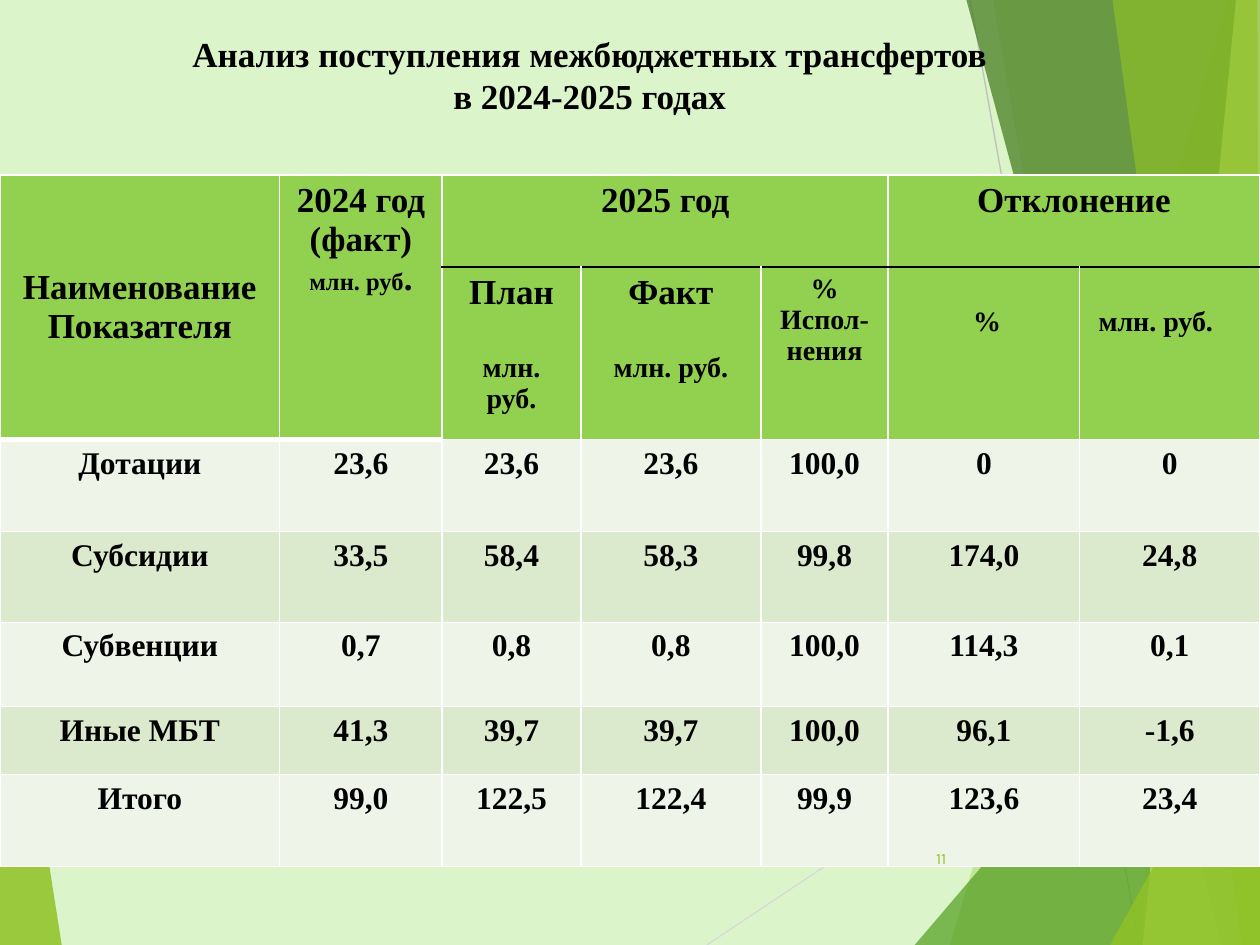
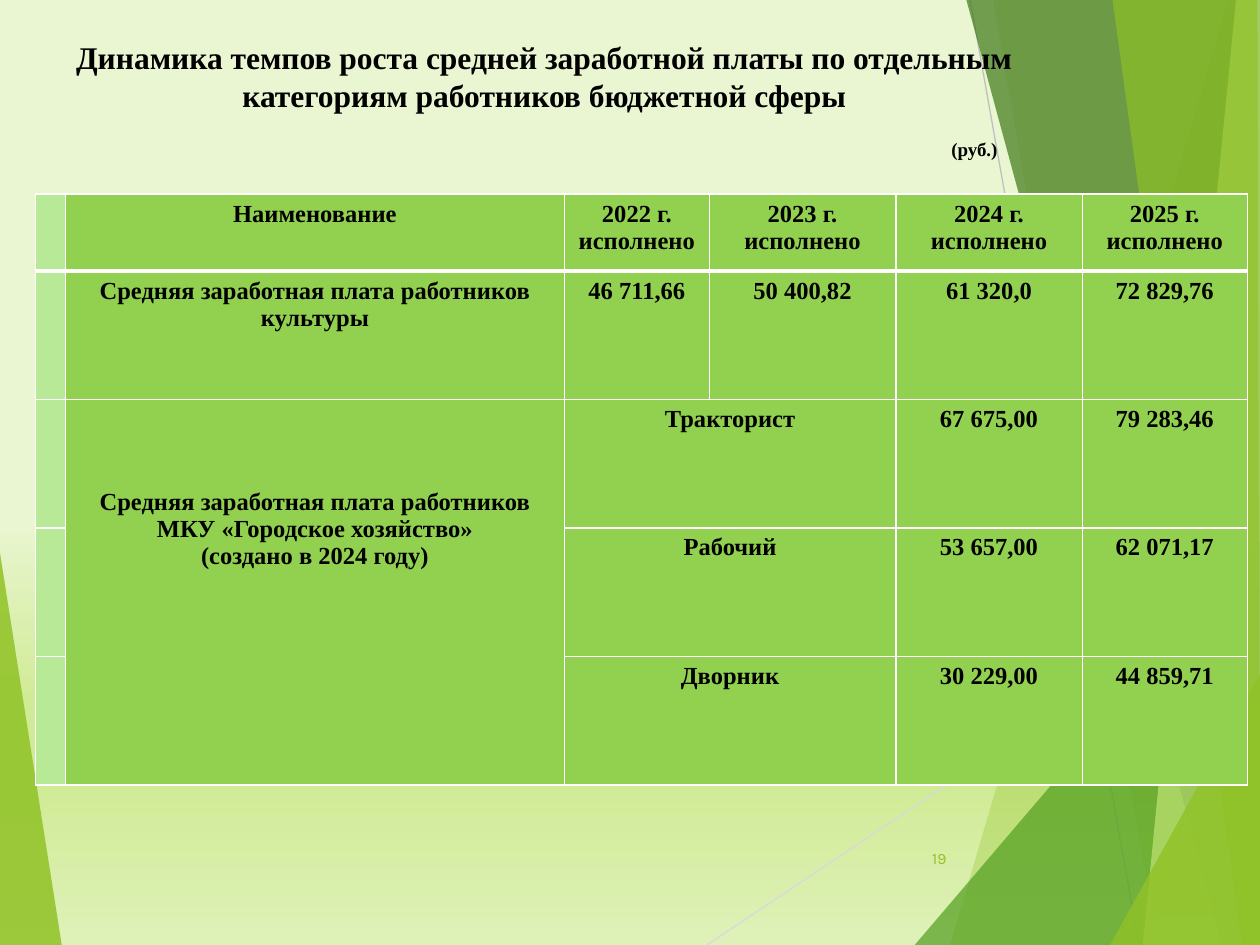
from dataclasses import dataclass

from lxml.etree import SubElement
from pptx import Presentation
from pptx.dml.color import RGBColor
from pptx.enum.shapes import MSO_CONNECTOR as CONN
from pptx.enum.text import MSO_ANCHOR as ANCHOR, MSO_AUTO_SIZE as AUTO, PP_ALIGN as AL
from pptx.oxml.ns import qn
from pptx.util import Inches, Pt


@dataclass(frozen=True)
class Theme:
    font: str = "Times New Roman"
    number_font: str = "Karla"
    black: str = "000000"
    white: str = "FFFFFF"
    accent: str = "90C226"
    leaf: str = "54A021"
    forest: str = "3F7819"
    lime: str = "C0E474"
    header: str = "92D050"
    margin_cell: str = "B7E996"
    bands: tuple = ("EEF4E8", "DBE9CD")
    page: str = "DBF4CA"
    page_stops: tuple = ((22, "EAF6D1"), (55, "EAF6D1"), (74, "D0EB96"),
                         (83, "D0EB96"), (100, "DFF1B9"))
    big: float = 20
    body: float = 18
    unit: float = 16
    small: float = 14
    note: float = 10.8
    number: float = 9


T = Theme()

# Facets of the shared backdrop: corner points, colour, opacity in percent
FACETS = [
    ([(0, 4.39), (0.49, 7.5), (0, 7.5)], T.accent, 85),
    ([(9.75, 0), (7.54, 7.5), (10, 7.5), (10, 0)], T.accent, 30),
    ([(7.88, 0), (9.19, 7.5), (10, 7.5), (10, 0)], T.accent, 20),
    ([(7.26, 7.5), (10, 4.29), (10, 7.5)], T.leaf, 72),
    ([(7.67, 0), (9.7, 7.5), (10, 7.5), (10, 0)], T.forest, 70),
    ([(9.81, 0), (9.07, 7.5), (10, 7.5), (10, 0)], T.lime, 70),
    ([(8.83, 0), (9.86, 7.5), (10, 7.5), (9.98, 0)], T.accent, 65),
    ([(8.81, 7.5), (10, 5.35), (10, 7.5)], T.accent, 80),
]
RAYS = [((5.61, 7.5), (10, 4.57), "D9D9D9"), ((7.7, 0), (9.04, 7.5), "BFBFBF")]


def rgb(color):
    return RGBColor.from_string(color)


def write(tf, text, size=T.body, color=T.black, bold=True, font=T.font,
          align=AL.CENTER, before=0, indent=0, same=False):
    """Add paragraphs (one per line of text), or a run to the last paragraph."""
    for line in text.split("\n"):
        p = tf.paragraphs[-1]
        if p.runs and not same:
            p = tf.add_paragraph()
        p.alignment = align
        if before:
            p.space_before = Pt(before)
        if indent:
            p._p.get_or_add_pPr().set("marL", str(Inches(indent)))
        for i, part in enumerate(line.split("\v")):
            if i:
                p.add_line_break()
            r = p.add_run()
            r.text = part
            f = r.font
            f.name, f.size, f.bold = font, Pt(size), bold
            f.color.rgb = rgb(color)


# Backdrop, drawn once and kept on the layout

def add_facet(s, points, color, opacity):
    start, *rest = [(Inches(x), Inches(y)) for x, y in points]
    builder = s.shapes.build_freeform(*start)
    builder.add_line_segments(rest, close=True)
    sp = builder.convert_to_shape()
    sp.shadow.inherit = False
    sp.fill.solid()
    sp.fill.fore_color.rgb = rgb(color)
    sp.line.fill.background()
    clr = sp.element.spPr.find(qn("a:solidFill"))[0]
    SubElement(clr, qn("a:alpha"), val=str(opacity * 1000))
    return sp


def add_ray(s, start, end, color):
    ends = [Inches(v) for v in (*start, *end)]
    line = s.shapes.add_connector(CONN.STRAIGHT, *ends)
    line.line.color.rgb = rgb(color)
    line.line.width = Pt(0.75)
    SubElement(line.element.spPr, qn("a:effectLst"))
    return line


def move_backdrop_to_layout(s):
    parts = [add_facet(s, *FACETS[0])]
    parts += [add_ray(s, *ray) for ray in RAYS]
    parts += [add_facet(s, *facet) for facet in FACETS[1:]]
    for number, part in enumerate(parts, 100):
        part.element.xpath(".//p:cNvPr")[0].set("id", str(number))
        s.slide_layout.shapes.element.append(part.element)


# Parts of a slide

def set_title(s, left, top, width, height, inset=(0.1, 0.05, 0.1)):
    title = s.shapes.title
    title.left, title.top = Inches(left), Inches(top)
    title.width, title.height = Inches(width), Inches(height)
    tf = title.text_frame
    tf.word_wrap, tf.auto_size = True, AUTO.NONE
    tf.vertical_anchor = ANCHOR.TOP
    tf.margin_left, tf.margin_top, tf.margin_right = map(Inches, inset)
    return tf


def add_number(s, number):
    box = s.shapes.add_textbox(Inches(7.05), Inches(6.61), Inches(0.56), Inches(0.4))
    tf = box.text_frame
    tf.word_wrap, tf.vertical_anchor = True, ANCHOR.MIDDLE
    write(tf, number, size=T.number, color=T.accent, bold=False,
          font=T.number_font, align=AL.RIGHT)


def set_gradient(s):
    fill = s.background.fill
    fill.gradient()
    fill.gradient_angle = 270
    stops = s.element.xpath("./p:cSld/p:bg//a:gsLst")[0]
    for stop in list(stops):
        stops.remove(stop)
    for pos, color in T.page_stops:
        gs = SubElement(stops, qn("a:gs"), pos=str(pos * 1000))
        SubElement(gs, qn("a:srgbClr"), val=color)


def add_edge(cell, side, color, width):
    tc_pr = cell._tc.get_or_add_tcPr()
    ln = SubElement(tc_pr, qn("a:ln" + side), w=str(Pt(width)))
    fill = SubElement(ln, qn("a:solidFill"))
    SubElement(fill, qn("a:srgbClr"), val=color)


def add_grid(s, left, top, cols, rows, fill_of, edge_of, merges):
    frame = s.shapes.add_table(len(rows), len(cols), Inches(left), Inches(top),
                               Inches(sum(cols)), Inches(sum(rows)))
    table = frame.table
    table.first_row = table.horz_banding = False
    for col, width in zip(table.columns, cols):
        col.width = Inches(width)
    for row, height in zip(table.rows, rows):
        row.height = Inches(height)
    for r in range(len(rows)):
        for c in range(len(cols)):
            cell = table.cell(r, c)
            for side in "LRTB":
                add_edge(cell, side, *edge_of(r, c, side))
            cell.fill.solid()
            cell.fill.fore_color.rgb = rgb(fill_of(r, c))
    for first, last in merges:
        table.cell(*first).merge(table.cell(*last))
    return table


# Slide: budget transfers

TRANSFERS = [
    ("Дотации", "23,6", "23,6", "23,6", "100,0", "0", "0"),
    ("Субсидии", "33,5", "58,4", "58,3", "99,8", "174,0", "24,8"),
    ("Субвенции", "0,7", "0,8", "0,8", "100,0", "114,3", "0,1"),
    ("Иные МБТ", "41,3", "39,7", "39,7", "100,0", "96,1", "-1,6"),
    ("Итого", "99,0", "122,5", "122,4", "99,9", "123,6", "23,4"),
]


def transfer_fill(r, c):
    return T.header if r < 2 else T.bands[r % 2]


def transfer_edge(r, c, side):
    if c < 2 and r < 2 and side == "B":
        return T.white, 3
    if c >= 2 and (r, side) in ((0, "B"), (1, "T")):
        return T.black, 1
    return T.white, 1


def fill_transfers(s):
    s.background.fill.solid()
    s.background.fill.fore_color.rgb = rgb(T.page)
    tf = set_title(s, 0.51, 0.21, 8.34, 0.94)
    write(tf, "Анализ поступления межбюджетных трансфертов\vв 2024-2025 годах",
          size=T.big)

    table = add_grid(s, 0, 1.39, [2.22, 1.29, 1.1, 1.43, 1.01, 1.52, 1.43],
                     [0.73, 1.37, 0.73, 0.72, 0.67, 0.54, 0.73],
                     transfer_fill, transfer_edge,
                     [((0, 0), (1, 0)), ((0, 1), (1, 1)),
                      ((0, 2), (0, 4)), ((0, 5), (0, 6))])
    # Header
    table.cell(0, 0).vertical_anchor = ANCHOR.MIDDLE
    for c, text in ((0, "Наименование\nПоказателя"), (1, "2024 год (факт)"),
                    (2, "2025 год"), (5, "Отклонение")):
        write(table.cell(0, c).text_frame, text, size=T.big)
    tf = table.cell(0, 1).text_frame
    write(tf, "млн. руб", size=T.small)
    write(tf, ".", size=T.big, same=True)
    for c, text in ((2, "План"), (3, "Факт")):
        tf = table.cell(1, c).text_frame
        write(tf, text, size=T.big)
        write(tf, "млн. руб.", size=T.unit, before=23)
    write(table.cell(1, 4).text_frame, "%\nИспол-\nнения", size=T.unit)
    for c, text, align in ((5, "%", AL.CENTER), (6, "млн. руб.", AL.LEFT)):
        cell = table.cell(1, c)
        cell.margin_top, cell.margin_left = Inches(0.31), Inches(0.15)
        write(cell.text_frame, text, size=T.unit, align=align)
    # Values
    for r, values in enumerate(TRANSFERS, 2):
        for c, text in enumerate(values):
            write(table.cell(r, c).text_frame, text)
    add_number(s, "11")


# Slide: average pay

PAY = [
    ["Наименование"] + [f"{year} г.\nисполнено" for year in range(2022, 2026)],
    ["Средняя заработная плата работников культуры",
     "46 711,66", "50 400,82", "61 320,0", "72 829,76"],
    ["Средняя заработная плата работников\nМКУ «Городское хозяйство»\n"
     "(создано в 2024 году)", "Тракторист", "", "67 675,00", "79 283,46"],
    ["", "Рабочий", "", "53 657,00", "62 071,17"],
    ["", "Дворник", "", "30 229,00", "44 859,71"],
]


def pay_fill(r, c):
    return T.header if c else T.margin_cell


def pay_edge(r, c, side):
    return T.white, 3 if (r, side) in ((0, "B"), (1, "T")) else 1


def fill_pay(s):
    set_gradient(s)
    tf = set_title(s, 0.5, 0.3, 8.44, 1.09, inset=(0, 0, 0.8))
    write(tf, "Динамика темпов роста средней заработной платы по отдельным\v"
              "категориям работников бюджетной сферы")
    write(tf, "(руб.)", size=T.note, align=AL.LEFT, before=14, indent=7.05)

    jobs = [((r, 2), (r, 3)) for r in (2, 3, 4)]
    table = add_grid(s, 0.28, 1.54, [0.24, 3.96, 1.15, 1.48, 1.48, 1.31],
                     [0.61] + [1.02] * 4, pay_fill, pay_edge,
                     [((2, 1), (4, 1))] + jobs)
    table.cell(2, 1).margin_top = Inches(0.71)
    for r, values in enumerate(PAY):
        for c, text in enumerate(values, 1):
            if text:
                write(table.cell(r, c).text_frame, text, size=T.small)
    add_number(s, "19")


def main():
    prs = Presentation()
    prs.slide_width, prs.slide_height = Inches(10), Inches(7.5)
    title_only = prs.slide_layouts[5]
    transfers, pay = [prs.slides.add_slide(title_only) for _ in range(2)]
    move_backdrop_to_layout(transfers)
    fill_transfers(transfers)
    fill_pay(pay)
    prs.save("out.pptx")


if __name__ == "__main__":
    main()
